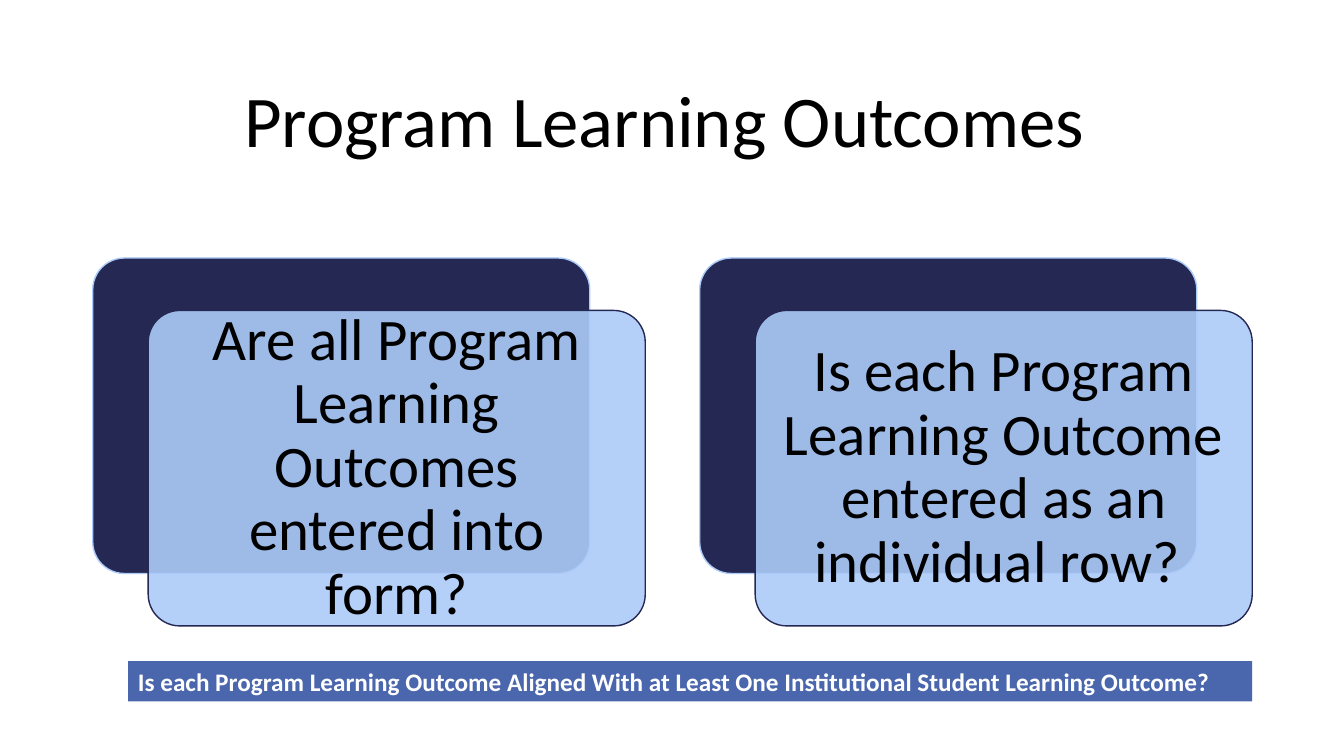
"""Build the Program Learning Outcomes slide with two question cards and a banner."""
import pptx
import pptx.util
from pptx.dml.color import RGBColor
from pptx.enum.shapes import MSO_SHAPE
from pptx.enum.text import MSO_ANCHOR, PP_ALIGN
from pptx.oxml.ns import qn
from lxml import etree

Inches = pptx.util.Inches
Pt = pptx.util.Pt

BLACK = RGBColor(0x00, 0x00, 0x00)
WHITE = RGBColor(0xFF, 0xFF, 0xFF)
NAVY = RGBColor(0x24, 0x28, 0x52)
PALE_BLUE = RGBColor(0xAC, 0xCB, 0xF9)
BLUE = RGBColor(0x4A, 0x66, 0xAC)

QUESTIONS = [
    "Are all Program Learning Outcomes entered into form?",
    "Is each Program Learning Outcome entered as an individual row? ",
]
BANNER = ("Is each Program Learning Outcome Aligned With at Least One "
          "Institutional Student Learning Outcome?")


def add_card(left, top, fill, line):
    sp = s.shapes.add_shape(MSO_SHAPE.ROUNDED_RECTANGLE, Inches(left), Inches(top),
                            Inches(4.93), Inches(3.13))
    sp.adjustments[0] = 0.1
    sp.shadow.inherit = False
    sp.fill.solid()
    sp.fill.fore_color.rgb = fill
    sp.line.color.rgb = line
    sp.line.width = Pt(1)
    return sp


def add_text(tf, text, size, color, align, bold=False):
    tf.word_wrap = True
    tf.vertical_anchor = MSO_ANCHOR.MIDDLE
    p = tf.paragraphs[0]
    p.alignment = align
    r = p.add_run()
    r.text = text
    r.font.name = "Calibri"
    r.font.size = Pt(size)
    r.font.bold = bold
    r.font.color.rgb = color
    return p


prs = pptx.Presentation()
prs.slide_width = Inches(13.33)
prs.slide_height = Inches(7.5)
s = prs.slides.add_slide(prs.slide_layouts[5])

title = s.shapes.title
title.left, title.top = Inches(0.92), Inches(0.61)
title.width, title.height = Inches(11.5), Inches(1.24)
p = add_text(title.text_frame, "Program Learning Outcomes ", 52, BLACK, PP_ALIGN.CENTER)
p.line_spacing = 0.9

for i, question in enumerate(QUESTIONS):
    left = 0.92 + i * 6.02
    add_card(left, 2.56, NAVY, PALE_BLUE)
    front = add_card(left + 0.55, 3.08, PALE_BLUE, NAVY)
    color = front.fill._xPr.find(qn("a:solidFill"))[0]
    etree.SubElement(color, qn("a:alpha")).set("val", "90000")
    tf = front.text_frame
    tf.margin_left = tf.margin_right = Inches(0.17)
    tf.margin_top = tf.margin_bottom = Inches(0.17)
    p = add_text(tf, question, 42, BLACK, PP_ALIGN.CENTER)
    p.line_spacing = 0.9

banner = s.shapes.add_shape(MSO_SHAPE.RECTANGLE, Inches(1.27), Inches(6.56),
                            Inches(11.15), Inches(0.4))
banner.shadow.inherit = False
banner.fill.solid()
banner.fill.fore_color.rgb = BLUE
banner.line.fill.background()
add_text(banner.text_frame, BANNER, 18, WHITE, PP_ALIGN.LEFT, bold=True)

prs.save("out.pptx")
